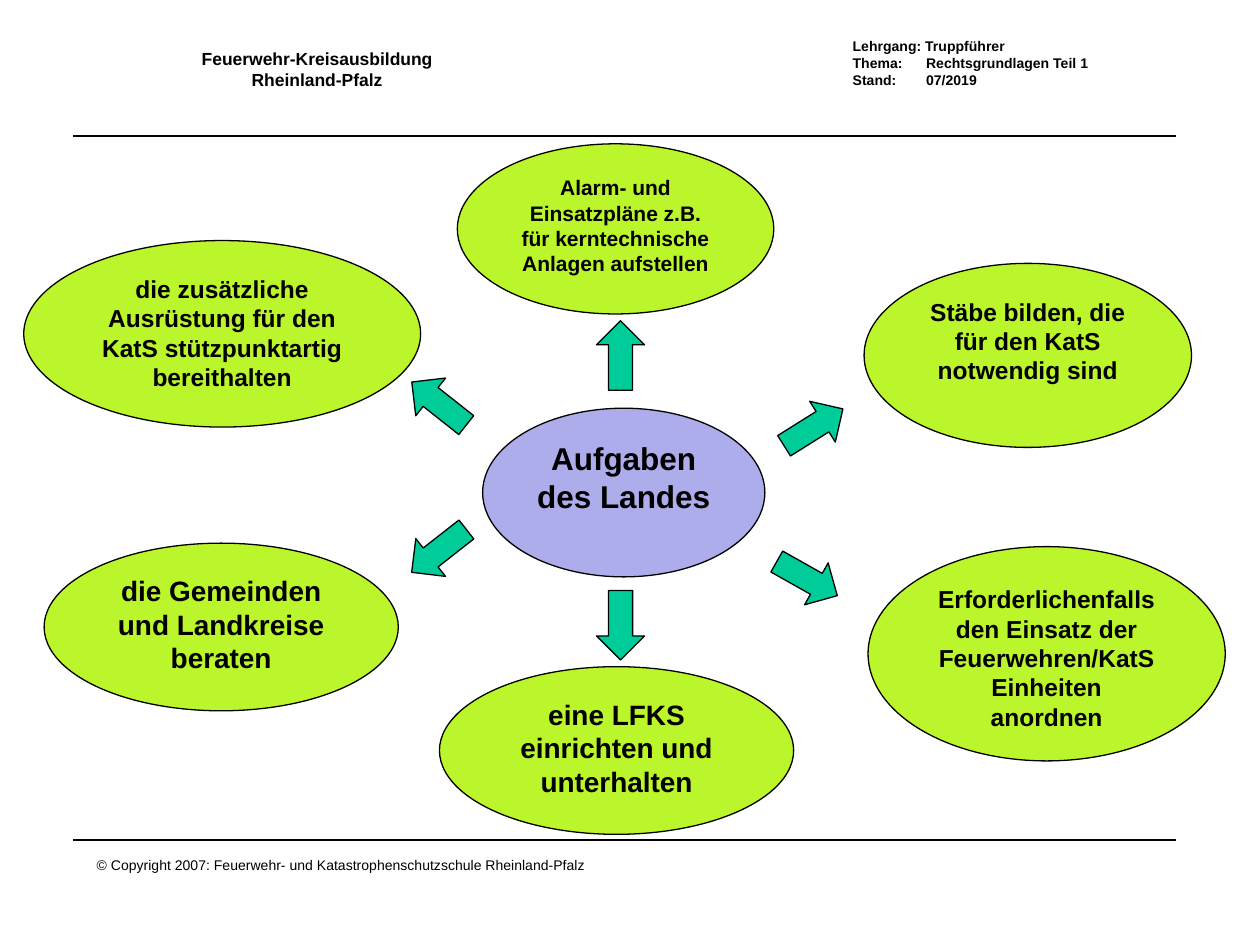
from lxml import etree
from pptx import Presentation
from pptx import util as u
from pptx.dml.color import RGBColor
from pptx.enum import shapes, text
from pptx.oxml import ns

BLACK, LIME, LILAC, GREEN = "000000", "BBF52B", "ADADEB", "00CC99"
LEFT, CENTER = text.PP_ALIGN.LEFT, text.PP_ALIGN.CENTER

HUB = ("Aufgaben des Landes", 18, 9.25, 5.33, 5.69, 3.4)
TASKS = [
    ("Stäbe bilden, die für den KatS notwendig sind", 14, 16.94, 2.41, 6.6, 3.71),
    ("die Gemeinden und Landkreise beraten", 16, 0.41, 8.05, 7.14, 3.38),
    ("Erforderlichenfalls den Einsatz der Feuerwehren/KatS Einheiten anordnen",
     14, 17.02, 8.12, 7.2, 4.32),
    ("die zusätzliche Ausrüstung für den KatS stützpunktartig bereithalten",
     14, 0, 1.95, 8, 3.76),
    ("Alarm- und Einsatzpläne z.B. für kerntechnische Anlagen aufstellen",
     12, 8.74, 0, 6.38, 3.43),
    ("eine LFKS einrichten und unterhalten", 16, 8.38, 10.54, 7.14, 3.38),
]
ARROWS = [
    (15.22, 5.23, 327.9), (15.09, 8.28, 29.4), (7.67, 7.72, 141.9),
    (7.67, 4.75, 218.3), (11.33, 3.78, 270), (11.33, 9.22, 90),
]


def color(value):
    """Turn a hex string into a colour."""
    return RGBColor.from_string(value)


def set_font(para, size, bold):
    """Give a paragraph its Arial font in black."""
    para.font.name = "Arial"
    para.font.size = u.Pt(size)
    para.font.bold = bold
    para.font.color.rgb = color(BLACK)


def add_tab(para, position):
    """Add a left tab stop to a paragraph."""
    tabs = etree.SubElement(para._p.get_or_add_pPr(), ns.qn("a:tabLst"))
    etree.SubElement(tabs, ns.qn("a:tab"), pos=str(u.Cm(position)), algn="l")


def add_text(page, left, top, width, height, lines, size, bold=True, align=LEFT, tab=None):
    """Place an unwrapped text box with one paragraph for each line."""
    box = page.shapes.add_textbox(u.Cm(left), u.Cm(top), u.Cm(width), u.Cm(height))
    frame = box.text_frame
    frame.word_wrap = False
    frame.text = "\n".join(lines)
    for para in frame.paragraphs:
        para.alignment = align
        if tab:
            add_tab(para, tab)
        set_font(para, size, bold)


def add_rule(page, left, top, width):
    """Draw a horizontal black line."""
    rule = page.shapes.add_connector(
        shapes.MSO_CONNECTOR.STRAIGHT, u.Cm(left), u.Cm(top), u.Cm(left + width), u.Cm(top))
    rule.line.color.rgb = color(BLACK)
    rule.line.width = u.Pt(1)
    etree.SubElement(rule._element.spPr, ns.qn("a:effectLst"))


def add_figure(page, kind, left, top, width, height, fill):
    """Draw a filled preset shape with a thin black outline."""
    figure = page.shapes.add_shape(kind, u.Cm(left), u.Cm(top), u.Cm(width), u.Cm(height))
    figure.shadow.inherit = False
    figure.fill.solid()
    figure.fill.fore_color.rgb = color(fill)
    figure.line.color.rgb = color(BLACK)
    figure.line.width = u.Pt(0.75)
    return figure


def add_bubble(page, left, top, width, height, words, size, fill):
    """Draw an ellipse with bold text that starts at its top."""
    bubble = add_figure(page, shapes.MSO_SHAPE.OVAL, left, top, width, height, fill)
    frame = bubble.text_frame
    frame.word_wrap = True
    frame.vertical_anchor = text.MSO_ANCHOR.TOP
    frame.text = words
    para = frame.paragraphs[0]
    para.alignment = CENTER
    set_font(para, size, True)


def add_header(page, left, top, width):
    """Place the organisation, the course details and the upper rule."""
    add_text(page, left + 2.34, top + 0.2, 5.16, 1.09,
             ["Feuerwehr-Kreisausbildung", "Rheinland-Pfalz"], 10, align=CENTER)
    add_text(page, left + 15.47, top, 5.33, 1.7,
             ["Lehrgang: Truppführer", "Thema:\tRechtsgrundlagen Teil 1", "Stand:\t07/2019"],
             8, tab=1.48)
    add_rule(page, left, top + 2.1, width)


def add_footer(page, left, top, width):
    """Place the lower rule and the copyright line."""
    add_rule(page, left, top, width)
    add_text(page, left + 0.23, top + 0.21, 10.39, 0.58,
             ["© Copyright 2007: Feuerwehr- und Katastrophenschutzschule Rheinland-Pfalz"],
             8, bold=False)


def add_diagram(page, left, top):
    """Place the hub, the tasks around it and the arrows between them."""
    for fill, bubbles in ((LILAC, [HUB]), (LIME, TASKS)):
        for words, size, x, y, width, height in bubbles:
            add_bubble(page, left + x, top + y, width, height, words, size, fill)
    for x, y, angle in ARROWS:
        arrow = add_figure(page, shapes.MSO_SHAPE.RIGHT_ARROW,
                           left + x, top + y, 1.4, 0.97, GREEN)
        arrow.rotation = angle


def main():
    """Build the slide and save it."""
    deck = Presentation()
    deck.slide_width, deck.slide_height = u.Cm(25.4), u.Cm(19.05)
    page = deck.slides.add_slide(deck.slide_layouts[6])
    add_header(page, 1.47, 0.64, 22.23)
    add_footer(page, 1.47, 16.94, 22.23)
    add_diagram(page, 0.48, 2.9)
    deck.save("out.pptx")


if __name__ == "__main__":
    main()
